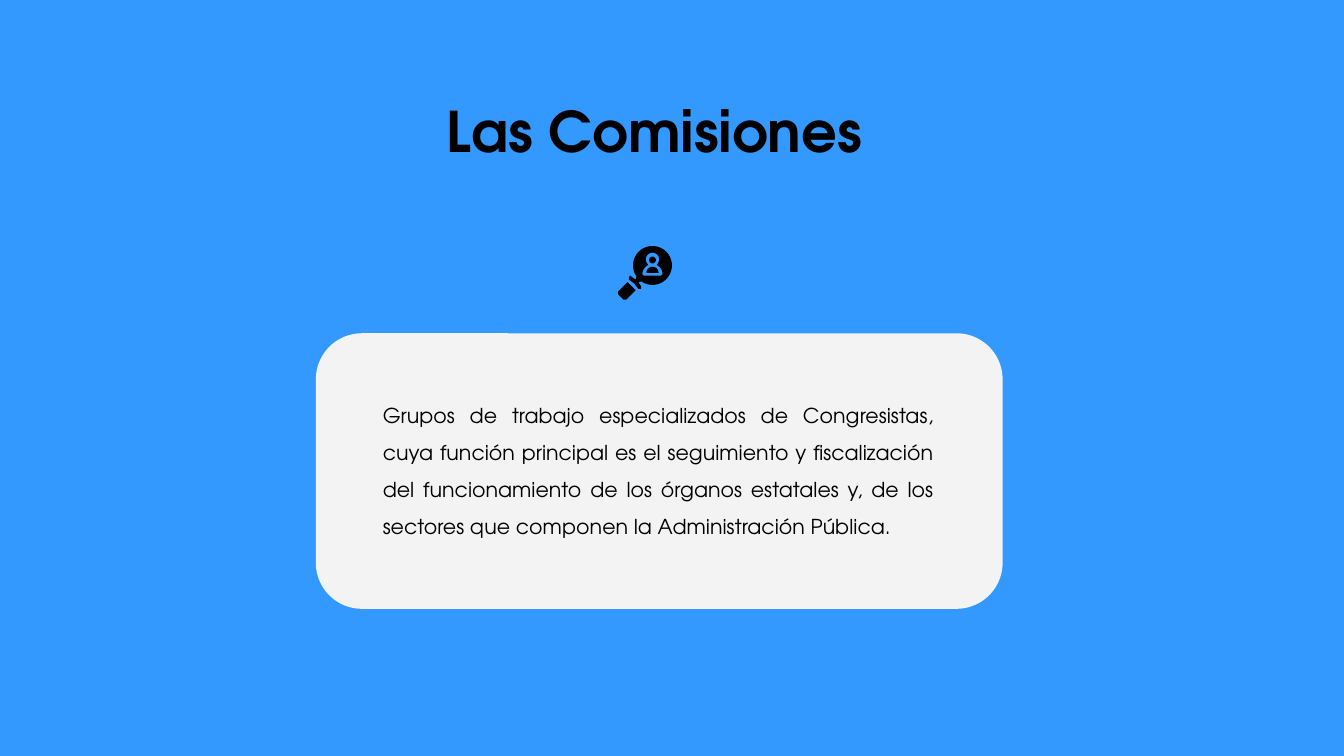
from math import cos, radians, sin

from pptx import Presentation
from pptx import util as u
from pptx.dml.color import RGBColor
from pptx.enum import shapes, text

THEME = {
    "font": "TeX Gyre Adventor",
    "background": RGBColor.from_string("3399FF"),
    "card": RGBColor.from_string("F3F3F3"),
    "ink": RGBColor.from_string("000000"),
    "title_size": u.Pt(30),
    "body_size": u.Pt(11),
}

TITLE = "Las Comisiones"
BODY = (
    "Grupos de trabajo especializados de Congresistas, cuya función principal "
    "es el seguimiento y fiscalización del funcionamiento de los órganos "
    "estatales y, de los sectores que componen la Administración Pública."
)
SLIDE_WIDTH = 10
SLIDE_HEIGHT = SLIDE_WIDTH * 9 / 16
TITLE_BOX = (1.59, 0.51, 6.56, 0.92)
CARD_BOX = (2.35, 2.48, 5.11, 2.05)
BODY_BOX = (2.75, 2.81, 4.3, 1.84)
ICON_X = 4.855


def arc(center_y, radius, start, end, step=10):
    return [
        (ICON_X + radius * cos(radians(angle)), center_y + radius * sin(radians(angle)))
        for angle in range(start, end + 1, step)
    ]


LENS = arc(1.975, 0.145, 145, 485) + [
    (4.75, 2.1), (4.77, 2.13), (4.77, 2.15), (4.75, 2.15), (4.72, 2.11),
    (4.68, 2.08), (4.68, 2.06), (4.69, 2.05), (4.7, 2.06), (4.73, 2.08),
]
PERSON_CUTOUT = (
    arc(1.93, 0.05, 130, 410)
    + arc(2.04, 0.075, 300, 360)
    + [(4.92, 2.05), (4.79, 2.05)]
    + arc(2.04, 0.075, 180, 240)
)
HEAD = arc(1.935, 0.025, 0, 360)
SHOULDERS = arc(2.03, 0.045, 180, 360)
HANDLE = [
    (4.67, 2.1), (4.6, 2.17), (4.6, 2.19), (4.64, 2.23), (4.66, 2.23), (4.73, 2.16),
]
ICON_PARTS = [[HEAD], [SHOULDERS], [LENS, PERSON_CUTOUT], [HANDLE]]


def inches(values):
    return [u.Inches(value) for value in values]


def set_attributes(target, values):
    for name, value in values.items():
        setattr(target, name, value)


def paint(shape, color):
    shape.shadow.inherit = False
    shape.fill.solid()
    shape.fill.fore_color.rgb = color
    shape.line.fill.background()


def write_text(shape, content, anchor, font_format, paragraph_format):
    frame = shape.text_frame
    margins = dict.fromkeys(
        ("margin_left", "margin_top", "margin_right", "margin_bottom"), u.Inches(0.1)
    )
    set_attributes(frame, margins | {
        "word_wrap": True,
        "auto_size": text.MSO_AUTO_SIZE.NONE,
        "vertical_anchor": anchor,
    })
    paragraph = frame.paragraphs[0]
    set_attributes(paragraph, paragraph_format)
    run = paragraph.add_run()
    run.text = content
    set_attributes(run.font, {"name": THEME["font"]} | font_format)
    run.font.color.rgb = THEME["ink"]


def draw_icon(slide):
    group = slide.shapes.add_group_shape()
    for contours in ICON_PARTS:
        builder = None
        for contour in contours:
            points = [inches(point) for point in contour]
            if builder is None:
                builder = group.shapes.build_freeform(*points[0])
            else:
                builder.move_to(*points[0])
            builder.add_line_segments(points[1:], close=True)
        paint(builder.convert_to_shape(), THEME["ink"])


def main():
    presentation = Presentation()
    presentation.slide_width = u.Inches(SLIDE_WIDTH)
    presentation.slide_height = u.Inches(SLIDE_HEIGHT)
    slide = presentation.slides.add_slide(presentation.slide_layouts[5])
    slide.background.fill.solid()
    slide.background.fill.fore_color.rgb = THEME["background"]

    title = slide.shapes.title
    set_attributes(title, dict(zip(("left", "top", "width", "height"), inches(TITLE_BOX))))
    write_text(
        title, TITLE, text.MSO_ANCHOR.MIDDLE,
        {"size": THEME["title_size"], "bold": True},
        {"alignment": text.PP_ALIGN.CENTER},
    )

    card = slide.shapes.add_shape(
        shapes.MSO_SHAPE.ROUNDED_RECTANGLE, *inches(CARD_BOX)
    )
    card.adjustments[0] = 0.167
    paint(card, THEME["card"])

    body = slide.shapes.add_textbox(*inches(BODY_BOX))
    write_text(
        body, BODY, text.MSO_ANCHOR.TOP,
        {"size": THEME["body_size"]},
        {"alignment": text.PP_ALIGN.JUSTIFY, "line_spacing": 1.5},
    )

    draw_icon(slide)
    presentation.save("out.pptx")


if __name__ == "__main__":
    main()
